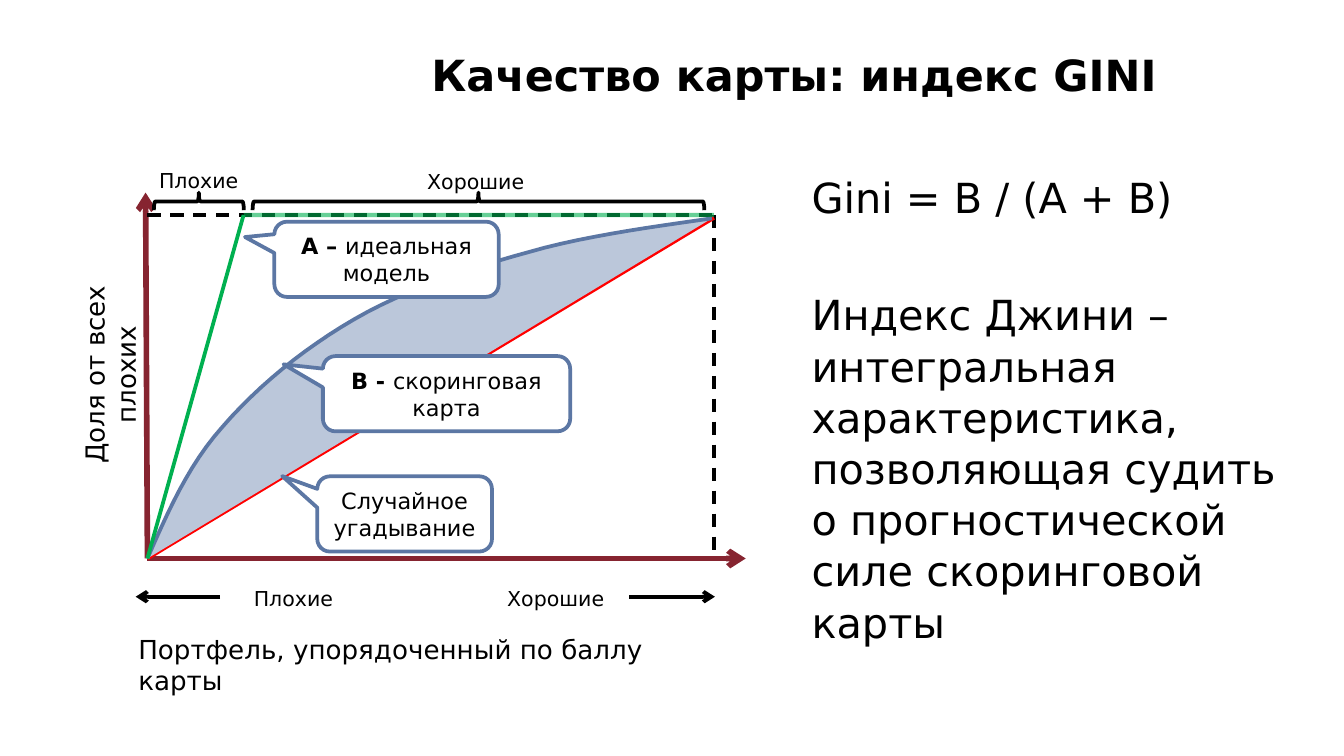
from lxml import etree
from pptx import Presentation
from pptx.dml.color import RGBColor
from pptx.enum.dml import MSO_LINE
from pptx.enum.shapes import MSO_CONNECTOR, MSO_SHAPE
from pptx.enum.text import MSO_ANCHOR, PP_ALIGN
from pptx.oxml.ns import qn
from pptx.util import Pt

LEFT, CENTER = PP_ALIGN.LEFT, PP_ALIGN.CENTER
TOP, MIDDLE = MSO_ANCHOR.TOP, MSO_ANCHOR.MIDDLE
STRAIGHT, DASH = MSO_CONNECTOR.STRAIGHT, MSO_LINE.DASH
BRACE, CALLOUT = MSO_SHAPE.LEFT_BRACE, MSO_SHAPE.ROUNDED_RECTANGULAR_CALLOUT

FONT = "DejaVu Sans"
COLORS = {
    "text": "000000", "axis": "862430", "random": "FF0000", "ideal": "00B050",
    "model": "5C77A4", "area": "BBC7DA", "paper": "FFFFFF",
}
# Scorecard curve as Bezier segments, in points right of and above the origin
MODEL_CURVE = [
    [(0, 0), (10.8, 24.5), (21.6, 49.7), (40.3, 70.6)],
    [(40.3, 70.6), (59, 92.2), (83.5, 112.3), (110.9, 128.2)],
    [(110.9, 128.2), (138.2, 144), (172.8, 155.5), (204.5, 164.2)],
    [(204.5, 164.2), (236.2, 173.5), (283, 179.3), (302.4, 182.2)],
]
CURVE_STEPS = 12


def rgb(name):
    return RGBColor.from_string(COLORS[name])


def write(frame, paragraphs, size, align=LEFT, anchor=TOP, gap=0, spacing=None):
    """Fill a text frame; each paragraph is a list of (text, bold) runs."""
    frame.word_wrap = True
    frame.vertical_anchor = anchor
    for index, runs in enumerate(paragraphs):
        paragraph = frame.add_paragraph() if index else frame.paragraphs[0]
        paragraph.alignment = align
        paragraph.space_before = Pt(gap if index else 0)
        if spacing:
            paragraph.line_spacing = spacing
        for text, bold in runs:
            run = paragraph.add_run()
            run.text = text
            run.font.name, run.font.size, run.font.bold = FONT, Pt(size), bold
            run.font.color.rgb = rgb("text")


def add_text(slide, box, paragraphs, size, **layout):
    label = slide.shapes.add_textbox(*map(Pt, box))
    write(label.text_frame, paragraphs, size, **layout)
    return label


def before_turn(box):
    """Box that covers the given box once it is turned by a quarter."""
    x, y, w, h = box
    return x + (w - h) / 2, y + (h - w) / 2, h, w


def add_line(slide, start, end, color, width, dash=None, arrow=False, alpha=None):
    connector = slide.shapes.add_connector(STRAIGHT, *map(Pt, (*start, *end)))
    line = connector.line
    line.color.rgb, line.width = rgb(color), Pt(width)
    if dash:
        line.dash_style = dash
    properties = connector._element.spPr
    ln = properties.find(qn("a:ln"))
    if arrow:
        etree.SubElement(ln, qn("a:tailEnd"), type="arrow")
    if alpha:
        fill_color = ln.find(".//" + qn("a:srgbClr"))
        etree.SubElement(fill_color, qn("a:alpha"), val=str(alpha * 1000))
    etree.SubElement(properties, qn("a:effectLst"))


def add_brace(slide, box):
    brace = slide.shapes.add_shape(BRACE, *map(Pt, before_turn(box)))
    brace.rotation = 90
    brace.shadow.inherit = False
    brace.fill.background()
    brace.line.color.rgb, brace.line.width = rgb("text"), Pt(2)


def add_callout(slide, box, pointer, runs):
    callout = slide.shapes.add_shape(CALLOUT, *map(Pt, box))
    callout.adjustments[0], callout.adjustments[1] = pointer
    callout.shadow.inherit = False
    callout.fill.solid()
    callout.fill.fore_color.rgb = rgb("paper")
    callout.line.color.rgb, callout.line.width = rgb("model"), Pt(2)
    frame = callout.text_frame
    frame.margin_left = frame.margin_right = Pt(3.6)
    frame.margin_top = frame.margin_bottom = Pt(3.6)
    write(frame, [runs], 12, align=CENTER, anchor=MIDDLE)


def bezier_point(segment, t):
    weights = ((1 - t) ** 3, 3 * t * (1 - t) ** 2, 3 * t * t * (1 - t), t ** 3)
    return [sum(w * p[axis] for w, p in zip(weights, segment)) for axis in (0, 1)]


def add_model_area(slide, left, bottom):
    points = [
        bezier_point(segment, step / CURVE_STEPS)
        for segment in MODEL_CURVE for step in range(1, CURVE_STEPS + 1)
    ]
    builder = slide.shapes.build_freeform(Pt(left), Pt(bottom))
    builder.add_line_segments(
        [(Pt(left + x), Pt(bottom - y)) for x, y in points], close=False)
    area = builder.convert_to_shape()
    area.shadow.inherit = False
    area.fill.solid()
    area.fill.fore_color.rgb = rgb("area")
    area.line.color.rgb, area.line.width = rgb("model"), Pt(2)


def add_curves(slide, box):
    left, top, width, height = box
    right, bottom = left + width, top + height
    origin, corner, ideal = (left, bottom), (right, top), (left + 51.5, top)
    add_line(slide, origin, (right + 17, bottom), "axis", 3, arrow=True)
    add_line(slide, origin, (left - 1, top - 12), "axis", 3, arrow=True)
    add_line(slide, (left, top), corner, "text", 1.75, dash=DASH)
    add_line(slide, corner, (right, bottom), "text", 1.75, dash=DASH)
    add_line(slide, origin, (right, top + 1.5), "random", 2)
    add_model_area(slide, left, bottom)
    add_line(slide, origin, ideal, "ideal", 2)
    add_line(slide, ideal, corner, "ideal", 2.25, alpha=60)


def add_axis_labels(slide, box):
    left, top, width, height = box
    right, bottom = left + width, top + height
    labels = [
        ("Плохие", left + 39, bottom + 11.3, 78.5),
        ("Хорошие", left + 179.5, bottom + 11.3, 78.5),
        ("Плохие", left - 10, top - 28.8, 75),
        ("Хорошие", left + 138.4, top - 28, 75),
    ]
    for text, x, y, label_width in labels:
        add_text(slide, (x, y, label_width, 21), [[(text, False)]], 11, align=CENTER)

    arrow_y = bottom + 20.5
    for start, end in ((left + 39, left - 6.3), (right - 45.5, right + 0.5)):
        add_line(slide, (start, arrow_y), (end, arrow_y), "text", 2, arrow=True)
    for x, brace_width in ((left + 3.4, 48.2), (left + 56.3, 242)):
        add_brace(slide, (x, top - 12, brace_width, 9.4))

    add_text(slide, (left - 12, bottom + 36.5, 332, 21),
             [[("Портфель, упорядоченный по баллу карты", False)]], 14)
    share = add_text(slide, before_turn((left - 40.5, top + 20, 28, 131)),
                     [[("Доля от всех плохих", False)]], 14, align=CENTER)
    share.rotation = 270


def add_callouts(slide, box):
    left, top = box[:2]
    callouts = [
        (91, 140, 93.6, (-0.701, -0.503), [("Случайное угадывание", False)]),
        (94, 75.6, 132.5, (-0.659, -0.39),
         [("B - ", True), ("скоринговая карта", False)]),
        (68, 3.6, 120.2, (-0.631, -0.296),
         [("A – ", True), ("идеальная модель", False)]),
    ]
    for dx, dy, width, pointer, runs in callouts:
        add_callout(slide, (left + dx, top + dy, width, 40.3), pointer, runs)


def add_gini_chart(slide, box):
    """Draw the chart; the box is its plot area."""
    add_curves(slide, box)
    add_axis_labels(slide, box)
    add_callouts(slide, box)


def add_title(slide, box):
    add_text(slide, box, [[("Качество карты: индекс GINI", True)]], 23, anchor=MIDDLE)


def add_definition(slide, box):
    formula = "Gini = B / (A + B)"
    meaning = ("Индекс Джини –интегральная характеристика, позволяющая судить "
               "о прогностической силе скоринговой карты")
    add_text(slide, box, [[(formula, False)], [(meaning, False)]], 22.2,
             gap=35.5, spacing=1.03)


def main():
    deck = Presentation()
    deck.slide_width, deck.slide_height = Pt(720), Pt(405)
    slide = deck.slides.add_slide(deck.slide_layouts[6])
    add_definition(slide, (427.7, 87.8, 274.3, 278))
    add_title(slide, (224, 21, 478, 38))
    add_gini_chart(slide, (79, 115.2, 303.5, 184))
    deck.save("out.pptx")


if __name__ == "__main__":
    main()
